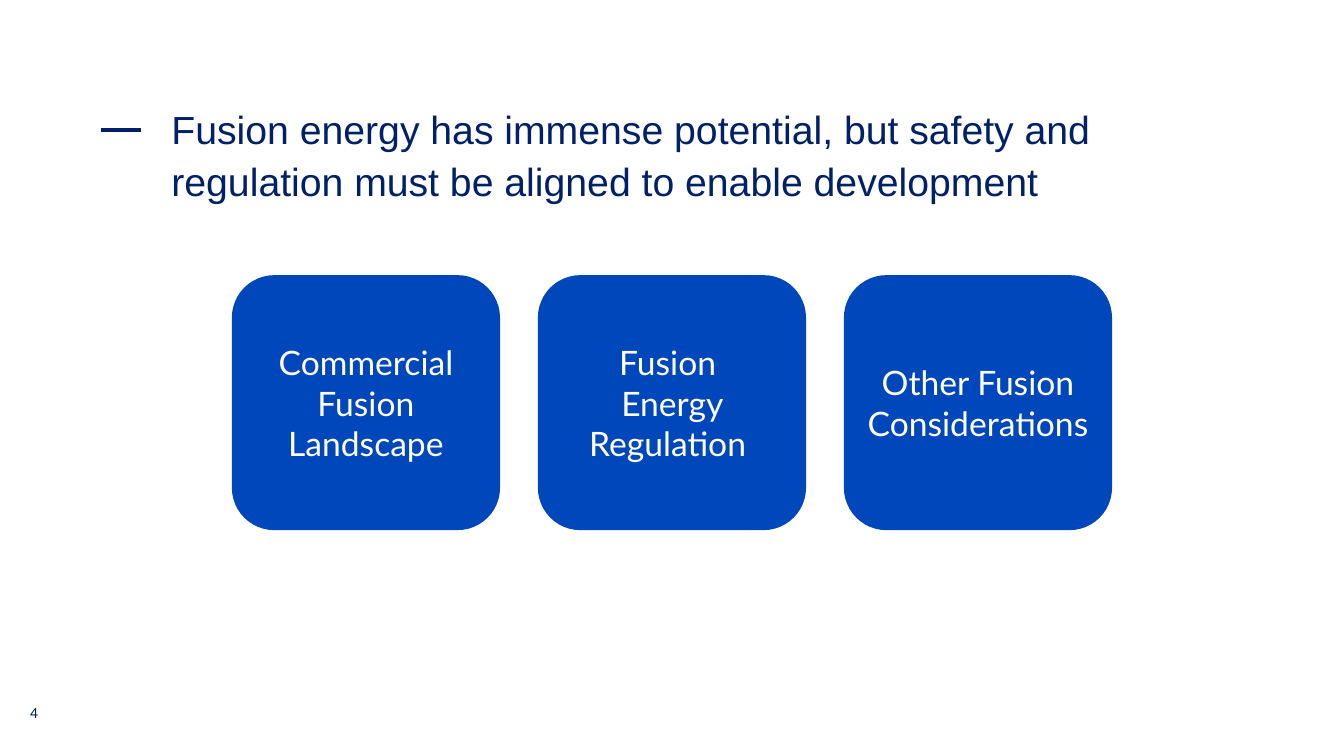
from pptx import Presentation
from pptx.dml.color import RGBColor
from pptx.enum.shapes import MSO_CONNECTOR, MSO_SHAPE
from pptx.enum.text import MSO_ANCHOR, PP_ALIGN
from pptx.oxml.ns import qn
from pptx.util import Inches, Pt
from lxml.etree import SubElement

TITLE = ("Fusion energy has immense potential, but safety and "
         "regulation must be aligned to enable development")
PAGE_NUMBER = "4"
TOPICS = [
    "Commercial Fusion Landscape",
    "Fusion \nEnergy Regulation ",
    "Other Fusion Considerations",
]

NAVY, BLUE, WHITE = "002169", "0047BB", "FFFFFF"
TITLE_FONT = {"name": "Arial", "size": Pt(28)}
NUMBER_FONT = {"name": "Calibri", "size": Pt(11)}
CARD_FONT = {"name": "Lato", "size": Pt(24)}

CARD_LEFT, CARD_TOP = 2.3, 2.73
CARD_W, CARD_H = 2.66, 2.53
CARD_STEP = 3.035


def rgb(hex_color):
    return RGBColor.from_string(hex_color)


def write(shape, text, font, color, margins=None, **paragraph_format):
    """Fill a shape with one formatted paragraph; margins are left, top, right, bottom."""
    tf = shape.text_frame
    tf.word_wrap = True
    if margins:
        for side, size in zip(("left", "top", "right", "bottom"), margins):
            setattr(tf, f"margin_{side}", Inches(size))
    p = tf.paragraphs[0]
    p.text = text
    for name, value in paragraph_format.items():
        setattr(p, name, value)
    for r in p.runs:
        for name, value in font.items():
            setattr(r.font, name, value)
        r.font.color.rgb = rgb(color)


def add_text(s, box, *args, **kwargs):
    write(s.shapes.add_textbox(*map(Inches, box)), *args, **kwargs)


def add_dash(s):
    dash = s.shapes.add_connector(
        MSO_CONNECTOR.STRAIGHT, Inches(1.4), Inches(1.29), Inches(1), Inches(1.29))
    dash.line.color.rgb = rgb(NAVY)
    dash.line.width = Pt(2.5)
    SubElement(dash._element.spPr, qn("a:effectLst"))


def add_card(s, left, text):
    sp = s.shapes.add_shape(
        MSO_SHAPE.ROUNDED_RECTANGLE,
        *map(Inches, (left, CARD_TOP, CARD_W, CARD_H)))
    sp.shadow.inherit = False
    sp.fill.solid()
    sp.fill.fore_color.rgb = rgb(BLUE)
    sp.line.fill.background()
    sp.text_frame.vertical_anchor = MSO_ANCHOR.MIDDLE
    write(sp, text, CARD_FONT, WHITE, alignment=PP_ALIGN.CENTER)


def main():
    prs = Presentation()
    prs.slide_width, prs.slide_height = Inches(13.33), Inches(7.5)
    s = prs.slides.add_slide(prs.slide_layouts[6])
    add_dash(s)
    add_text(s, (1.7, 1, 10.51, 1), TITLE, TITLE_FONT, NAVY,
             margins=(0, 0, 0, 0), line_spacing=1.1)
    add_text(s, (0.3, 6.93, 0.48, 0.4), PAGE_NUMBER, NUMBER_FONT, NAVY,
             margins=(0, 0.05, 0, 0.05))
    for i, topic in enumerate(TOPICS):
        add_card(s, CARD_LEFT + i * CARD_STEP, topic)
    prs.save("out.pptx")


if __name__ == "__main__":
    main()
